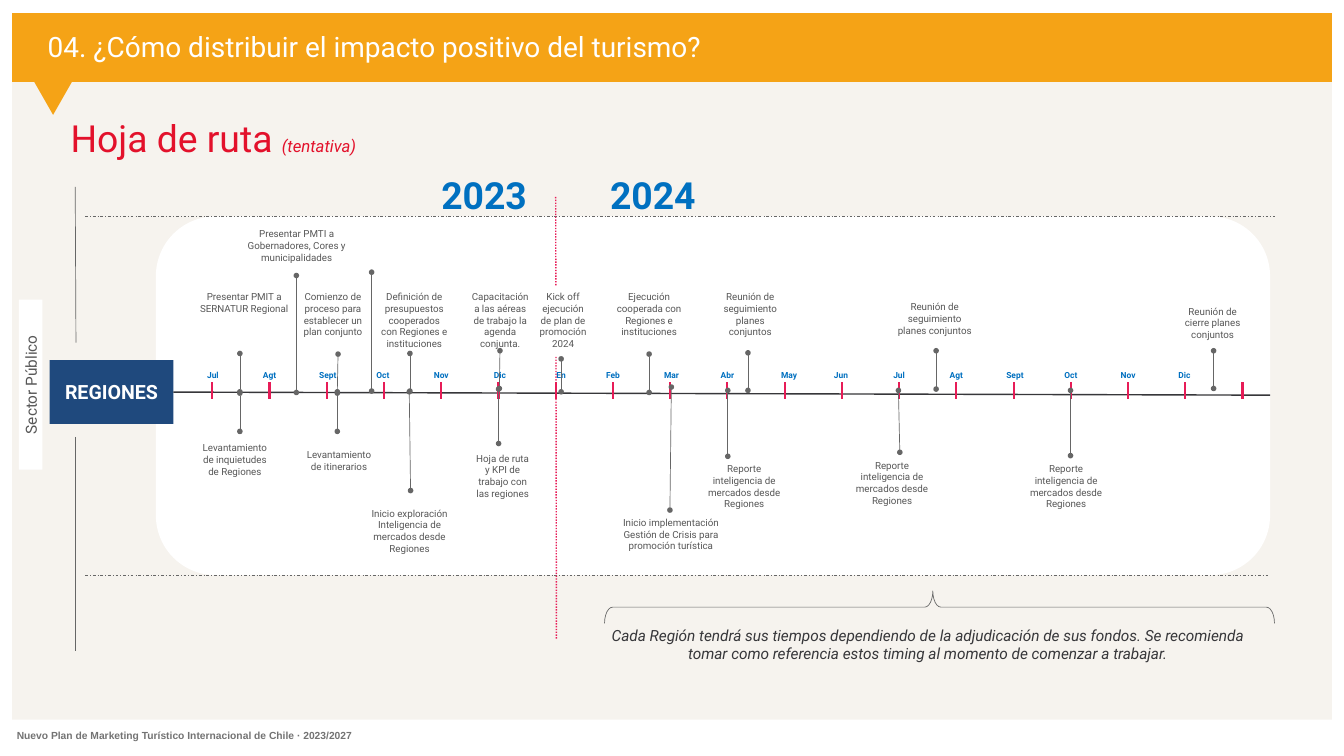
"""Build the tentative 2023-2024 road map slide for the regions."""
from dataclasses import dataclass
from typing import Optional

from lxml import etree
from pptx import Presentation
from pptx.dml.color import RGBColor
from pptx.enum.dml import MSO_LINE
from pptx.enum.shapes import MSO_CONNECTOR, MSO_SHAPE
from pptx.enum.text import MSO_ANCHOR, MSO_AUTO_SIZE, PP_ALIGN
from pptx.oxml.ns import qn
from pptx.shapes.autoshape import Shape
from pptx.shapes.connector import Connector
from pptx.text.text import TextFrame
from pptx.util import Pt

TOP, MIDDLE = MSO_ANCHOR.TOP, MSO_ANCHOR.MIDDLE
LEFT, CENTER = PP_ALIGN.LEFT, PP_ALIGN.CENTER
DASH_DOT, DOTTED = MSO_LINE.DASH_DOT, MSO_LINE.ROUND_DOT
RECT, ROUNDED, BRACE = MSO_SHAPE.RECTANGLE, MSO_SHAPE.ROUNDED_RECTANGLE, MSO_SHAPE.LEFT_BRACE
STRAIGHT = MSO_CONNECTOR.STRAIGHT
NO_AUTOFIT = MSO_AUTO_SIZE.NONE
RIGHT_SIDE = 3

COLORS = {
    "white": "FFFFFF", "sand": "EFEBE2", "orange": "F5A316", "navy": "1F497D",
    "blue": "0070C0", "red": "E3112B", "pink": "E71C57", "grey": "666666",
    "note": "575757", "dark": "37373A", "footer": "737373",
}
NO_INSETS = (0, 0, 0, 0)
PADDING = (10.8, 5, 10.8, 5)
Box = tuple[float, float, float, float]


@dataclass
class Milestone:
    """A note on the timeline with its stem."""
    text: str
    box: Box
    stem: Box
    anchor: MSO_ANCHOR = MIDDLE
    fill: Optional[str] = None


@dataclass
class Month:
    """A month label and its shift from the tick."""
    label: str
    shift: float = 0


REPORT = "Reporte inteligencia de mercados desde Regiones"
FOLLOW_UP = "Reunión de seguimiento planes conjuntos"
MILESTONES = [
    Milestone("Presentar PMIT a SERNATUR Regional", (203, 306.7, 117.4, 49), (257, 378.7, 257, 419.8), TOP),
    Milestone("Presentar PMTI a Gobernadores, Cores y municipalidades",
              (254.2, 250.6, 127.4, 25.2), (317.5, 295.2, 317.5, 420.5)),
    Milestone("Comienzo de proceso para establecer un plan conjunto",
              (310.3, 306.7, 92.9, 62), (362.2, 379.4, 361.4, 419.8), TOP),
    Milestone("Definición de presupuestos cooperados con Regiones e instituciones",
              (396.7, 306.7, 94.3, 75), (439.2, 378.7, 439.2, 419), TOP),
    Milestone("Capacitación a las aéreas de trabajo la agenda conjunta.",
              (491, 306.7, 90, 75), (535.7, 375.8, 535, 416.2), TOP),
    Milestone("Kick off ejecución de plan de promoción 2024",
              (566.6, 306.7, 73.4, 75), (601.2, 384.5, 601.2, 419.8), TOP, "white"),
    Milestone("Ejecución cooperada con Regiones e instituciones",
              (645.1, 306.7, 100.8, 62), (695.5, 379.4, 695.5, 420.5), TOP),
    Milestone(FOLLOW_UP, (760.3, 306.7, 87.1, 62), (801.4, 378, 801.4, 418.3), TOP),
    Milestone(FOLLOW_UP, (951.1, 314.6, 100.8, 54), (1003, 375.8, 1003, 416.9)),
    Milestone("Reunión de cierre planes conjuntos", (1255.7, 319, 87.1, 54), (1300.3, 375.8, 1300.3, 416.2)),
    Milestone("Levantamiento de inquietudes de Regiones",
              (204.5, 475.2, 94.3, 34.6), (257, 421.2, 257, 462.2)),
    Milestone("Levantamiento de itinerarios", (316.1, 475.9, 94.3, 34.6), (361.4, 421.2, 361.4, 462.2)),
    Milestone("Inicio exploración Inteligencia de mercados desde Regiones",
              (385.9, 547.2, 105.8, 43.2), (438.5, 419.8, 439.9, 525.6)),
    Milestone("Hoja de ruta y KPI de trabajo con las regiones",
              (496.8, 488.2, 83.5, 43.2), (534.2, 416.9, 534.2, 475.2)),
    Milestone("Inicio implementación Gestión de Crisis para promoción turística",
              (651.6, 550.8, 134.6, 43.2), (719.3, 414.7, 717.8, 546.5)),
    Milestone(REPORT, (742.3, 503.3, 110.2, 35.3), (779.8, 418.3, 779.8, 488.9)),
    Milestone(REPORT, (900.7, 499.7, 110.2, 35.3), (962.6, 418.3, 964.1, 484.6)),
    Milestone(REPORT, (1087.2, 503.3, 110.2, 35.3), (1147, 418.3, 1147, 488.2)),
]
OCTOBER_STEM = (398.2, 291.6, 398.2, 419)
MONTHS = [
    Month("Jul", 0.6), Month("Agt"), Month("Sept", 1), Month("Oct", -1.2), Month("Nov"), Month("Dic", 1.5),
    Month("En", 5.8), Month("Feb"), Month("Mar", 1.4), Month("Abr"), Month("May", 4.8), Month("Jun", -1),
    Month("Jul"), Month("Agt"), Month("Sept", 1.5), Month("Oct"), Month("Nov"), Month("Dic", -1),
]
FIRST_TICK, TICK_STEP = 227.5, 61.32

presentation = Presentation()
presentation.slide_width, presentation.slide_height = Pt(1440), Pt(810)
slide = presentation.slides.add_slide(presentation.slide_layouts[5])


def rgb(color: str) -> RGBColor:
    """Look up a palette colour."""
    return RGBColor.from_string(COLORS[color])


def write(frame: TextFrame, text: str, *, size: float, color: str, font: str = "Roboto",
          bold: bool = False, italic: bool = False, align: PP_ALIGN = CENTER, anchor: MSO_ANCHOR = MIDDLE,
          insets: Box = PADDING, leading: Optional[float] = None) -> None:
    """Add a formatted run to the first paragraph of a frame."""
    frame.word_wrap, frame.auto_size, frame.vertical_anchor = True, NO_AUTOFIT, anchor
    frame.margin_left, frame.margin_top, frame.margin_right, frame.margin_bottom = map(Pt, insets)
    paragraph = frame.paragraphs[0]
    paragraph.alignment = align
    if leading:
        paragraph.line_spacing = Pt(leading)
    run = paragraph.add_run()
    run.text = text
    run.font.name, run.font.size = font, Pt(size)
    run.font.bold, run.font.italic = bold, italic
    run.font.color.rgb = rgb(color)


def add_text(box: Box, text: str, **style) -> TextFrame:
    """Place a text box and write in it."""
    frame = slide.shapes.add_textbox(*map(Pt, box)).text_frame
    write(frame, text, **style)
    return frame


def paint(shape: Shape, fill: Optional[str]) -> None:
    """Give a shape a plain fill or none, with no line or shadow."""
    shape.shadow.inherit = False
    shape.line.fill.background()
    if fill:
        shape.fill.solid()
        shape.fill.fore_color.rgb = rgb(fill)
    else:
        shape.fill.background()


def add_block(kind: MSO_SHAPE, box: Box, fill: Optional[str], rotation: float = 0) -> Shape:
    """Place a plain preset shape."""
    block = slide.shapes.add_shape(kind, *map(Pt, box))
    block.rotation = rotation
    paint(block, fill)
    return block


def add_line(ends: Box, color: str = "grey", width: float = 0.75,
             dash: Optional[MSO_LINE] = None, dots: bool = False) -> Connector:
    """Draw a straight line, with round ends if asked."""
    line = slide.shapes.add_connector(STRAIGHT, *map(Pt, ends))
    line.line.color.rgb, line.line.width = rgb(color), Pt(width)
    if dash:
        line.line.dash_style = dash
    properties = line.element.spPr
    if dots:
        for end in ("a:headEnd", "a:tailEnd"):
            etree.SubElement(properties.find(qn("a:ln")), qn(end), type="oval")
    etree.SubElement(properties, qn("a:effectLst"))
    return line


def add_milestone(milestone: Milestone) -> None:
    """Draw a milestone note and its stem."""
    style = dict(size=10.5, color="note", anchor=milestone.anchor)
    if milestone.fill:
        write(add_block(RECT, milestone.box, milestone.fill).text_frame, milestone.text, **style)
    else:
        add_text(milestone.box, milestone.text, **style)
    add_line(milestone.stem, dots=True)


panel = add_block(RECT, (13, 87.8, 1414, 683.3), "sand")
etree.SubElement(panel.element.spPr.find(qn("a:solidFill"))[0], qn("a:alpha"), val="56000")

outline = slide.shapes.build_freeform(Pt(1427), Pt(14), 1.0)
outline.add_line_segments([(Pt(x), Pt(y)) for x, y in
                           [(13, 14), (13, 87.8), (36.7, 87.8), (56.9, 123.1), (77, 87.8), (1427, 87.8)]])
paint(outline.convert_to_shape(), "orange")

title = slide.shapes.title
title.element.getparent().append(title.element)
title.left, title.top, title.width, title.height = map(Pt, (50.4, 30.2, 702, 38.2))
write(title.text_frame, "04. ¿Cómo distribuir el impacto positivo del turismo?", size=30, color="white",
      align=LEFT, anchor=TOP, insets=(0.7, 1, 0, 0))
add_text((18, 782, 371.5, 13), "Nuevo Plan de Marketing Turístico Internacional de Chile · 2023/2027", size=11,
         color="footer", font="Arial", bold=True, align=LEFT, anchor=TOP, insets=NO_INSETS, leading=12.2)
heading = dict(color="red", align=LEFT, anchor=TOP, insets=NO_INSETS, leading=38.8)
subtitle = add_text((75.6, 132.5, 957.6, 40.3), "Hoja de ruta ", size=40, **heading)
write(subtitle, "(tentativa)", size=18, italic=True, **heading)

add_block(ROUNDED, (167, 231.8, 1193.8, 384.5), "white")
add_line((80.6, 200.2, 81.4, 367.2))
add_line((80.6, 468, 80.6, 697.7))
add_line((91.4, 231.8, 1365.8, 231.8), dash=DASH_DOT)
add_line((91.4, 616.3, 1360.8, 616.3), dash=DASH_DOT)

regions = add_block(RECT, (53.3, 385.9, 132.5, 68.4), "navy")
write(regions.text_frame, "REGIONES", size=21, color="white", bold=True)
public_sector = add_block(RECT, (-58.3, 399.6, 182.2, 25.2), "white", rotation=270)
write(public_sector.text_frame, "Sector Público", size=16.5, color="note")

timeline = add_line((185.8, 420.1, 1360.8, 423.4), "dark", 1.5)
timeline.begin_connect(regions, RIGHT_SIDE)
for index in range(len(MONTHS) + 1):
    tick = FIRST_TICK + index * TICK_STEP
    add_line((tick, 409.7, tick, 427), "pink", 2.25)
for index, month in enumerate(MONTHS):
    center = FIRST_TICK + index * TICK_STEP + month.shift
    add_text((center - 31, 393.1, 62, 18.7), month.label, size=9, color="blue", bold=True)

add_line((595.4, 211, 596.2, 685.4), "pink", 1.5, DOTTED)
for year, year_left in (("2023", 415.4), ("2024", 596.2)):
    add_text((year_left, 179, 206.6, 59), year, size=40, color="blue", bold=True)

for milestone in MILESTONES:
    add_milestone(milestone)
add_line(OCTOBER_STEM, dots=True)

brace = add_block(BRACE, (989.3, 291.6, 34.6, 717.8), None, rotation=90)
brace.adjustments[0], brace.adjustments[1] = 0.25, 0.51
brace.line.color.rgb, brace.line.width = rgb("grey"), Pt(0.75)
add_text((627.1, 671, 733.7, 38.9), "Cada Región tendrá sus tiempos dependiendo de la adjudicación de sus fondos. "
         "Se recomienda tomar como referencia estos timing al momento de comenzar a trabajar.",
         size=16.5, color="dark", italic=True)

presentation.save("out.pptx")
